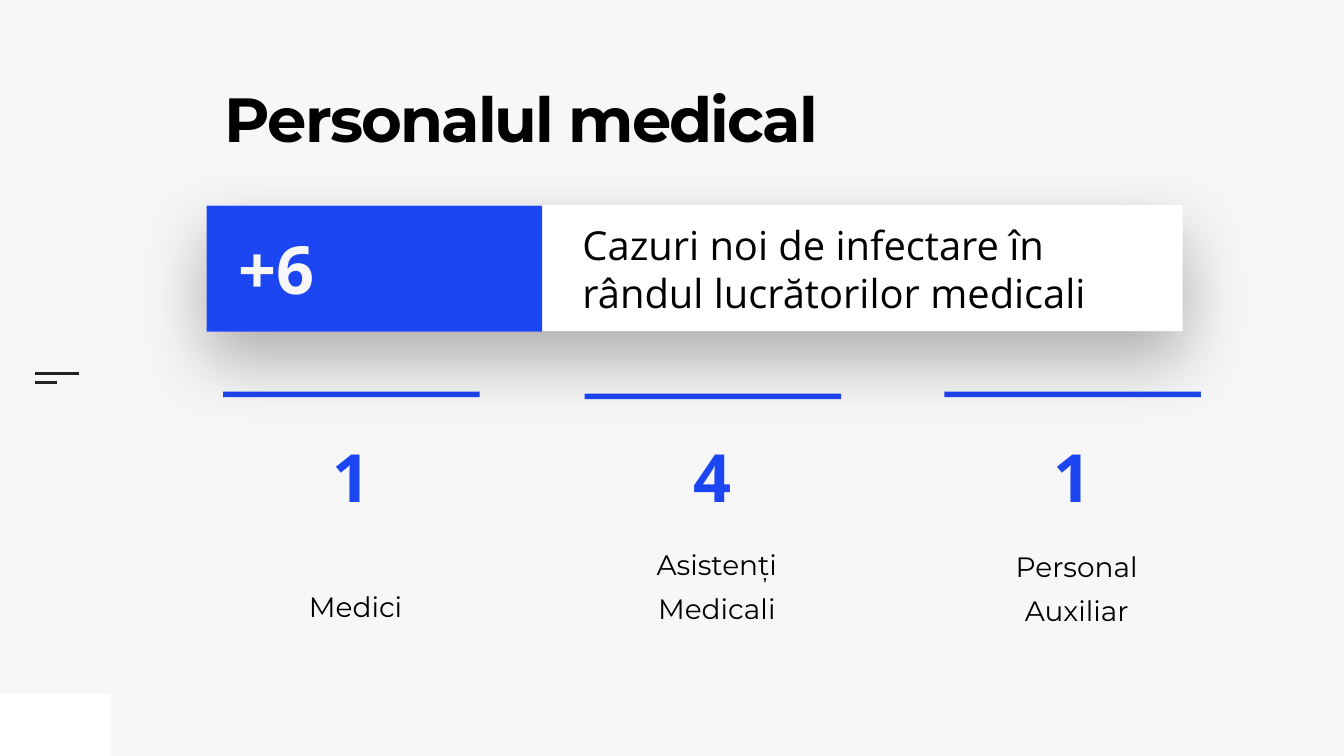
from dataclasses import dataclass

from lxml import etree
from pptx import Presentation
from pptx.dml.color import RGBColor
from pptx.enum.shapes import MSO_CONNECTOR, MSO_SHAPE
from pptx.enum.text import MSO_ANCHOR, MSO_AUTO_SIZE, PP_ALIGN
from pptx.oxml.ns import qn
from pptx.util import Emu, Pt

RECT = MSO_SHAPE.RECTANGLE
STRAIGHT = MSO_CONNECTOR.STRAIGHT
TOP, MIDDLE, BOTTOM = MSO_ANCHOR.TOP, MSO_ANCHOR.MIDDLE, MSO_ANCHOR.BOTTOM
LEFT, CENTER = PP_ALIGN.LEFT, PP_ALIGN.CENTER
NO_FIT = MSO_AUTO_SIZE.NONE
PX = 9144  # 100 px to the inch


@dataclass(frozen=True)
class Theme:
    back: str = "F7F7F7"
    white: str = "FEFFFF"
    blue: str = "1D46F3"
    black: str = "000000"
    dark: str = "222222"
    heading: str = "Montserrat"
    body: str = "Open Sans"
    title_size: int = 89
    number_size: int = 95
    lead_size: int = 57
    label_size: int = 40


def px(*values):
    return [Emu(v * PX) for v in values]


def write(tf, text, *, font, size, color, bold=False, align=LEFT, anchor=MIDDLE,
          insets=(10, 10, 10, 10), line=None, tracking=None):
    """Put one formatted paragraph into a text frame."""
    tf.word_wrap = True
    tf.auto_size = NO_FIT
    tf.vertical_anchor = anchor
    tf.margin_left, tf.margin_top, tf.margin_right, tf.margin_bottom = px(*insets)
    p = tf.paragraphs[0]
    p.alignment = align
    if line:
        p.line_spacing = line
    r = p.add_run()
    r.text = text
    r.font.name = font
    r.font.size = Pt(size)
    r.font.bold = bold
    r.font.color.rgb = RGBColor.from_string(color)
    if tracking:
        r.font._element.set("spc", str(int(tracking * 100)))


class Deck:
    def __init__(self, width, height, theme):
        self.theme = theme
        self.prs = Presentation()
        self.prs.slide_width, self.prs.slide_height = px(width, height)
        self.s = self.prs.slides.add_slide(self.prs.slide_layouts[5])
        fill = self.s.background.fill
        fill.solid()
        fill.fore_color.rgb = RGBColor.from_string(theme.back)

    def title(self, text, box, **style):
        sp = self.s.shapes.title
        sp.left, sp.top, sp.width, sp.height = px(*box)
        write(sp.text_frame, text, **style)

    def rect(self, box, color):
        sp = self.s.shapes.add_shape(RECT, *px(*box))
        sp.shadow.inherit = False
        sp.fill.solid()
        sp.fill.fore_color.rgb = RGBColor.from_string(color)
        sp.line.fill.background()
        return sp

    def text(self, text, box, **style):
        sp = self.s.shapes.add_textbox(*px(*box))
        write(sp.text_frame, text, **style)

    def line(self, x1, y1, x2, y2, color, width):
        cn = self.s.shapes.add_connector(STRAIGHT, *px(x1, y1, x2, y2))
        cn.line.color.rgb = RGBColor.from_string(color)
        cn.line.width = Pt(width)
        etree.SubElement(cn._element.spPr, qn("a:effectLst"))

    def shadow(self, sp, color, opacity, blur, distance):
        """Drop a soft shadow straight down."""
        effects = sp._element.spPr.find(qn("a:effectLst"))
        outer = etree.SubElement(
            effects, qn("a:outerShdw"), blurRad=str(Pt(blur)), dist=str(Pt(distance)),
            dir="5400000", algn="ctr", rotWithShape="0")
        clr = etree.SubElement(outer, qn("a:srgbClr"), val=color)
        etree.SubElement(clr, qn("a:alpha"), val=str(opacity * 1000))


def main():
    t = Theme()
    deck = Deck(2667, 1500, t)
    number = dict(font=t.body, size=t.number_size, bold=True)

    # Title
    deck.title("Personalul medical", (446, 187, 1301, 273), font=t.heading,
               size=t.title_size, color=t.black, bold=True, anchor=TOP,
               insets=(0, 0, 0, 0), line=0.8, tracking=-2.7)

    # Corner block and menu mark
    deck.rect((0, 1376, 220, 124), t.white)
    for y, end in ((741, 157), (759, 113)):
        deck.line(69, y, end, y, t.dark, 3)

    # Staff panels: left, panel top, bar top, count, label
    staff = (
        (443, 777, 777, "1", "Medici"),
        (1160, 781, 781, "4", "Asistenți Medicali"),
        (1874, 785, 777, "1", "Personal Auxiliar"),
    )
    width = 509
    for x, top, bar_top, _, label in staff:
        panel = deck.rect((x, top, width, 546), t.back)
        write(panel.text_frame, label, font=t.heading, size=t.label_size,
              color=t.black, align=CENTER, anchor=BOTTOM,
              insets=(55, 71, 39, 87), line=1.3)
        deck.rect((x, bar_top, width, 11), t.blue)

    # Headline card
    card = deck.rect((410, 407, 1937, 250), t.white)
    deck.shadow(card, t.black, opacity=30, blur=100, distance=40)
    deck.text("Cazuri noi de infectare în rândul lucrătorilor medicali",
              (1146, 426, 1176, 212), font=t.body, size=t.lead_size, color=t.black)
    deck.rect((410, 408, 666, 250), t.blue)
    deck.text("+6", (463, 442, 603, 180), color=t.back, **number)

    # Staff counts
    for x, _, _, count, _ in staff:
        deck.text(count, (x, 854, width, 180), color=t.blue, align=CENTER, **number)

    deck.prs.save("out.pptx")


if __name__ == "__main__":
    main()
